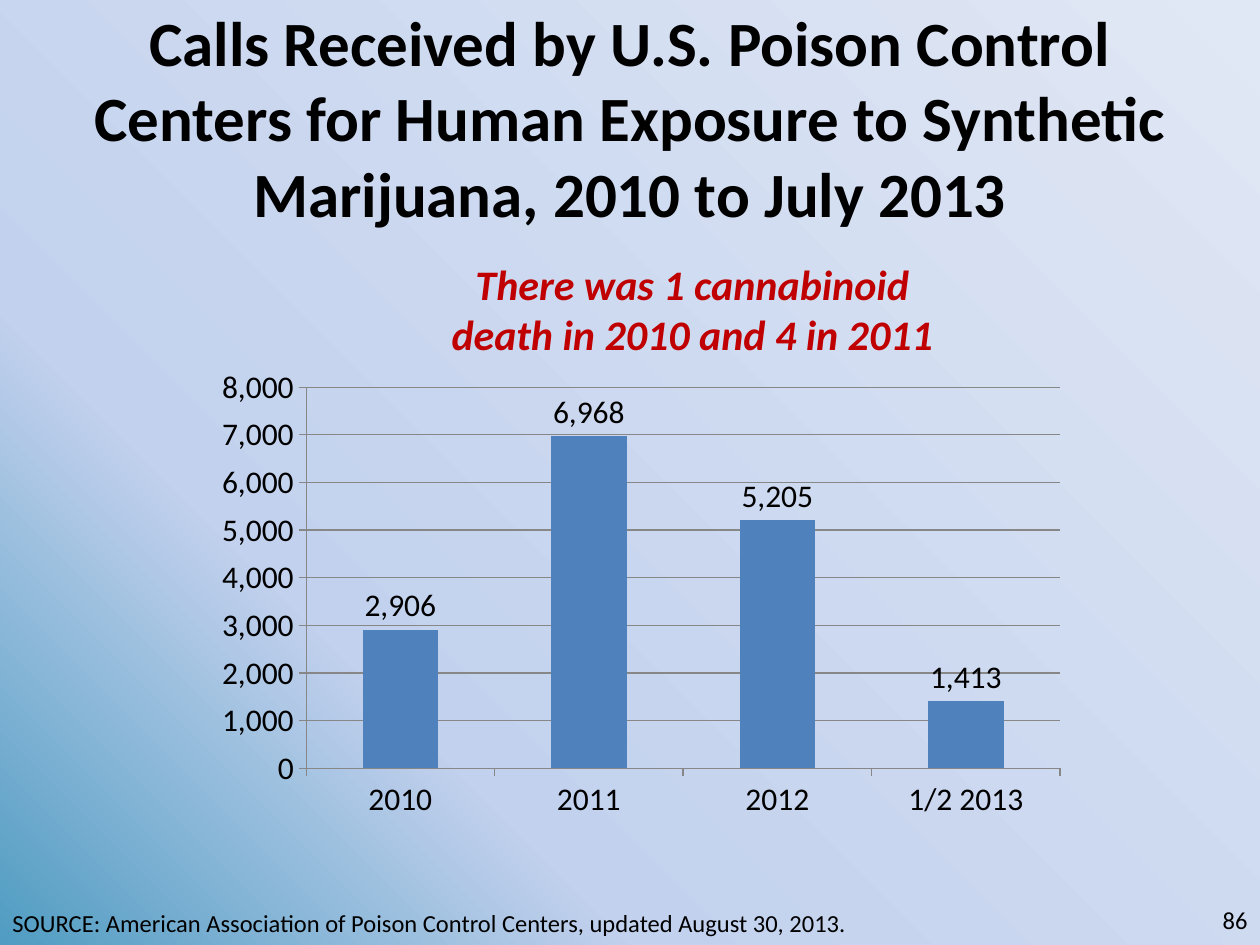
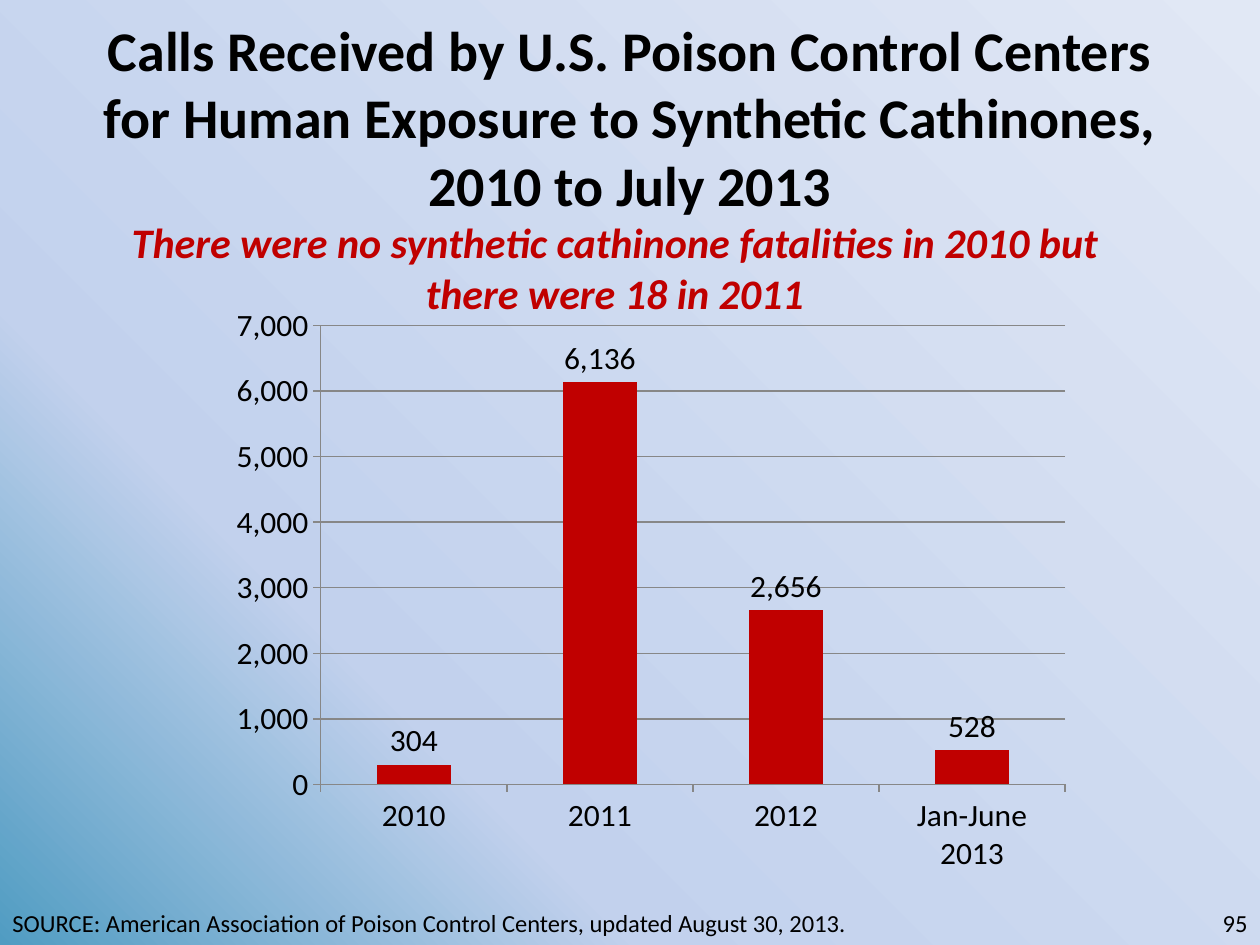
from pptx import Presentation
from pptx.chart.data import CategoryChartData
from pptx.dml.color import RGBColor
from pptx.enum import chart as charts, text
from pptx.oxml import parse_xml
from pptx.oxml.ns import nsdecls, qn
from pptx.util import Inches, Pt

# Shared style
FONT = "Calibri"
BLACK = RGBColor(0x00, 0x00, 0x00)
RED = RGBColor(0xC0, 0x00, 0x00)
BLUE = RGBColor(0x4F, 0x81, 0xBD)
GRID_GRAY = RGBColor(0x87, 0x87, 0x87)
BACKGROUND_STOPS = [
    (0, RGBColor(0x50, 0x9C, 0xC2)),
    (29, RGBColor(0xC2, 0xD1, 0xED)),
    (100, RGBColor(0xE1, 0xE8, 0xF5)),
]
NUMBER_FORMAT = "#,##0"
TITLE_BOX = (0.5, 0.3, 9, 1.25)
SOURCE_BOX = (0, 7.16, 8.17, 0.34)
SOURCE = "SOURCE: American Association of Poison Control Centers, updated August 30, 2013."


def style_font(font, size, color=BLACK, bold=False, italic=False):
    font.name = FONT
    font.size = Pt(size)
    font.color.rgb = color
    font.bold = bold
    font.italic = italic


def set_background(master):
    """Radial gradient spreading from the bottom left corner."""
    master.background.fill.gradient()
    gradient = master.element.find(".//" + qn("a:gradFill"))
    stops = "".join(
        f'<a:gs pos="{percent * 1000}"><a:srgbClr val="{color}"/></a:gs>'
        for percent, color in BACKGROUND_STOPS
    )
    gradient.getparent().replace(gradient, parse_xml(
        f'<a:gradFill {nsdecls("a")} rotWithShape="1"><a:gsLst>{stops}</a:gsLst>'
        '<a:path path="circle"><a:fillToRect t="100000" r="100000"/></a:path>'
        "</a:gradFill>"
    ))


def write_lines(frame, lines, align, **style):
    for index, line in enumerate(lines):
        para = frame.paragraphs[0] if index == 0 else frame.add_paragraph()
        para.alignment = align
        span = para.add_run()
        span.text = line
        style_font(span.font, **style)


def add_title(page, title, size):
    box = page.shapes.title
    box.left, box.top, box.width, box.height = map(Inches, TITLE_BOX)
    frame = box.text_frame
    frame.auto_size = text.MSO_AUTO_SIZE.NONE
    frame.vertical_anchor = text.MSO_ANCHOR.MIDDLE
    write_lines(frame, [title], text.PP_ALIGN.CENTER, size=size, bold=True)


def add_label(page, box, lines, align, anchor=text.MSO_ANCHOR.TOP, **style):
    frame = page.shapes.add_textbox(*map(Inches, box)).text_frame
    frame.word_wrap = True
    frame.vertical_anchor = anchor
    write_lines(frame, lines, align, **style)


def add_footer(page, number, number_top):
    add_label(page, SOURCE_BOX, [SOURCE], text.PP_ALIGN.LEFT, size=14)
    add_label(page, (7.67, number_top, 2.33, 0.4), [number], text.PP_ALIGN.RIGHT,
              anchor=text.MSO_ANCHOR.MIDDLE, size=14)


def set_plot_area(chart, fractions):
    """Fix the inner plot area as fractions of the chart frame."""
    plot_area = chart.element.find(".//" + qn("c:plotArea"))
    for old in plot_area.findall(qn("c:layout")):
        plot_area.remove(old)
    places = "".join(f'<c:{key} val="{value}"/>' for key, value in zip("xywh", fractions))
    plot_area.insert(0, parse_xml(
        f'<c:layout {nsdecls("c")}><c:manualLayout><c:layoutTarget val="inner"/>'
        f'<c:xMode val="edge"/><c:yMode val="edge"/>{places}'
        "</c:manualLayout></c:layout>"
    ))


def add_calls_chart(page, box, calls, color, top_value, plot_area):
    data = CategoryChartData(number_format=NUMBER_FORMAT)
    data.categories = list(calls)
    data.add_series("Series 1", list(calls.values()))
    chart = page.shapes.add_chart(
        charts.XL_CHART_TYPE.COLUMN_CLUSTERED, *map(Inches, box), data).chart
    chart.has_legend = False
    chart.has_title = False
    style_font(chart.font, 18)
    set_plot_area(chart, plot_area)

    # Axes
    values = chart.value_axis
    values.minimum_scale, values.maximum_scale, values.major_unit = 0, top_value, 1000
    values.has_major_gridlines = True
    values.tick_labels.number_format = NUMBER_FORMAT
    values.tick_labels.number_format_is_linked = False
    for axis in (chart.category_axis, values):
        axis.major_tick_mark = charts.XL_TICK_MARK.OUTSIDE
        axis.minor_tick_mark = charts.XL_TICK_MARK.NONE
    for lined in (chart.category_axis, values, values.major_gridlines):
        lined.format.line.color.rgb = GRID_GRAY
        lined.format.line.width = Pt(0.75)

    # Columns and their values
    plot = chart.plots[0]
    plot.gap_width = 150
    plot.vary_by_categories = False
    series = plot.series[0]
    series.invert_if_negative = False
    series.format.fill.solid()
    series.format.fill.fore_color.rgb = color
    labels = series.data_labels
    labels.show_value = True
    labels.position = charts.XL_LABEL_POSITION.OUTSIDE_END
    labels.number_format = NUMBER_FORMAT
    labels.number_format_is_linked = False
    style_font(labels.font, 18)


def add_calls_page(deck, title, title_size, deaths, deaths_box, chart, number, number_top):
    page = deck.slides.add_slide(deck.slide_layouts.get_by_name("Title Only"))
    add_title(page, title, title_size)
    add_calls_chart(page, **chart)
    add_label(page, deaths_box, deaths, text.PP_ALIGN.CENTER,
              size=24, color=RED, bold=True, italic=True)
    add_footer(page, number, number_top)


def main():
    deck = Presentation()
    deck.slide_width, deck.slide_height = Inches(10), Inches(7.5)
    set_background(deck.slide_master)

    # Synthetic marijuana
    add_calls_page(
        deck,
        title="Calls Received by U.S. Poison Control Centers for Human Exposure "
              "to Synthetic Marijuana, 2010 to July 2013",
        title_size=36,
        deaths=["There was 1 cannabinoid", "death in 2010 and 4 in 2011"],
        deaths_box=(3.08, 2, 4.83, 0.91),
        chart=dict(
            box=(0.83, 2.42, 8, 4.16),
            calls={"2010": 2906, "2011": 6968, "2012": 5205, "1/2 2013": 1413},
            color=BLUE, top_value=8000, plot_area=(0.2, 0.157, 0.748, 0.727)),
        number="86", number_top=7.1)

    # Synthetic cathinones
    add_calls_page(
        deck,
        title="Calls Received by U.S. Poison Control Centers for Human Exposure "
              "to Synthetic Cathinones, 2010 to July 2013",
        title_size=32,
        deaths=["There were no synthetic cathinone fatalities in 2010 but "
                "there were 18 in 2011"],
        deaths_box=(0.92, 1.67, 7.92, 0.91),
        chart=dict(
            box=(0.79, 2.3, 8.17, 4.62),
            calls={"2010": 304, "2011": 6136, "2012": 2656, "Jan-June 2013": 528},
            color=RED, top_value=7000, plot_area=(0.215, 0.062, 0.723, 0.8)),
        number="95", number_top=7.12)

    deck.save("out.pptx")


if __name__ == "__main__":
    main()
